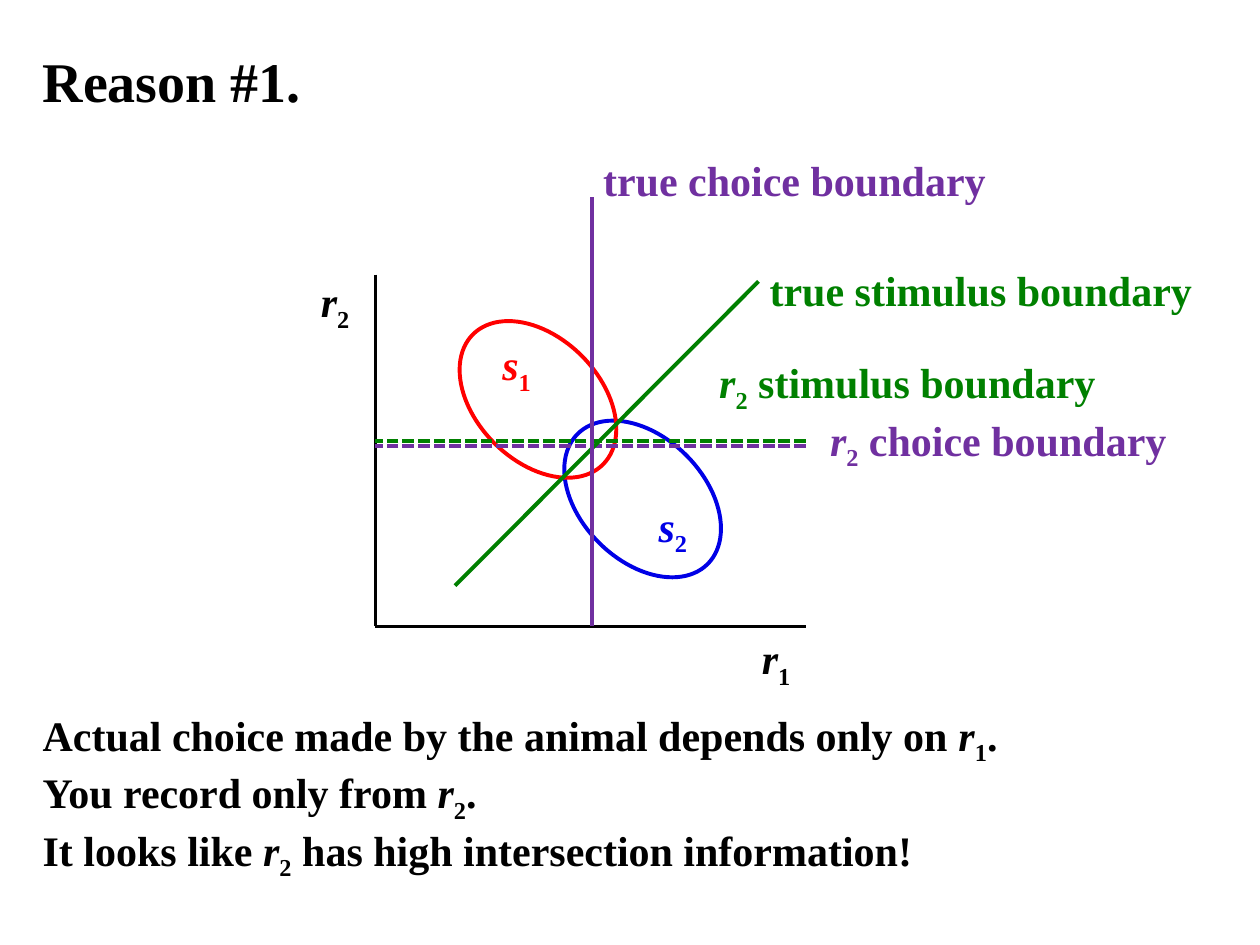
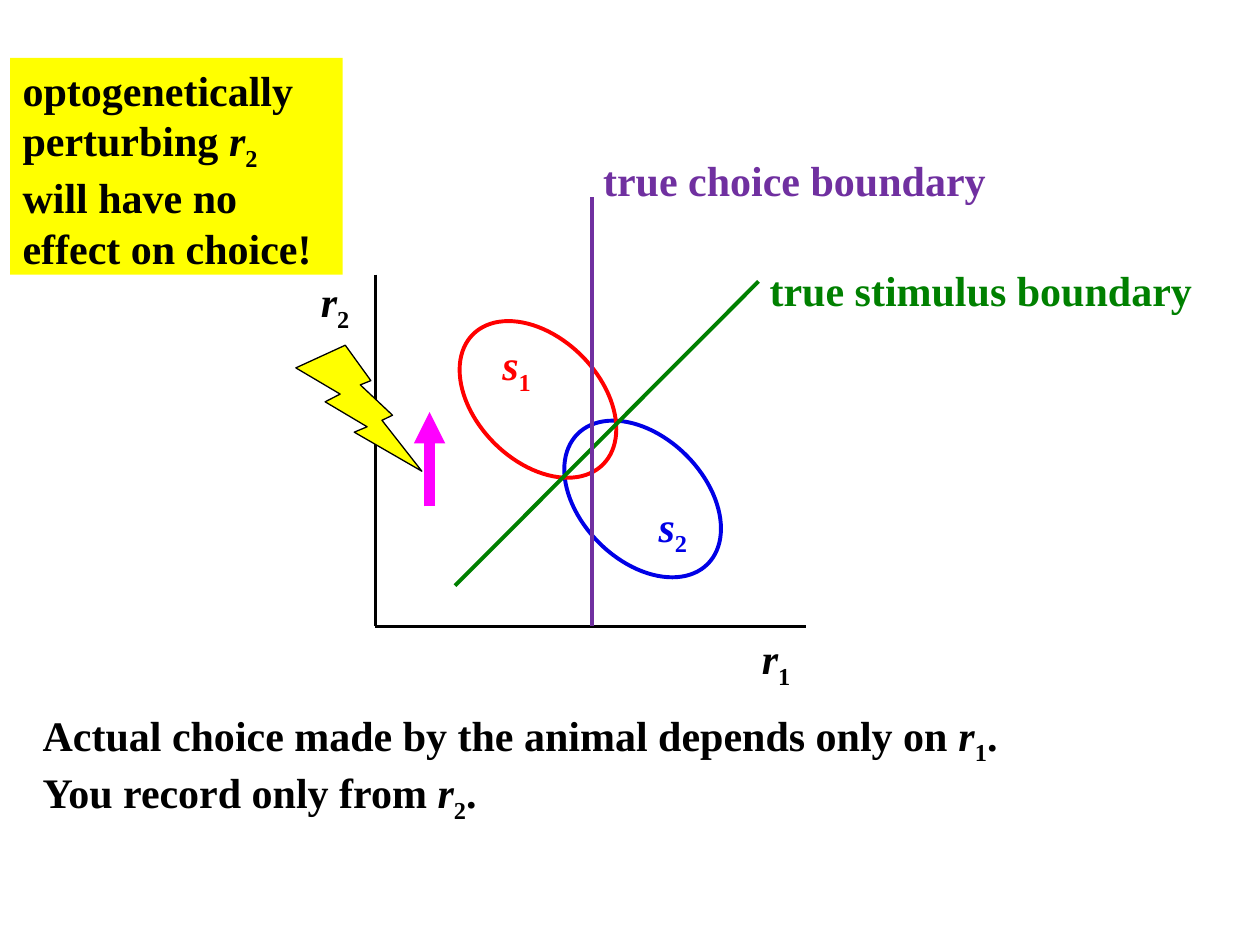
import dataclasses
import typing

import lxml.etree
import pptx
import pptx.dml.color
import pptx.enum.dml
import pptx.enum.shapes
import pptx.enum.text
import pptx.oxml.ns
import pptx.util

Pt = pptx.util.Pt
Kind = pptx.enum.shapes.MSO_SHAPE


@dataclasses.dataclass(frozen=True)
class Theme:
    font: str = "Times New Roman"
    title: int = 32
    body: int = 24
    black: str = "000000"
    red: str = "FF0000"
    blue: str = "0000E6"
    green: str = "008000"
    purple: str = "7030A0"
    yellow: str = "FFFF00"
    pink: str = "FF00FF"
    thin: float = 0.75
    axis: float = 1.5
    curve: float = 2.25
    arrow: float = 6


class Box(typing.NamedTuple):
    left: float
    top: float
    width: float
    height: float

    def sub(self, left, top, width, height):
        """Give a box whose place is measured from this one."""
        return Box(self.left + left, self.top + top, width, height)


THEME = Theme()
PLOT = Box(214.5, 157, 246, 201)
TITLE = Box(17.3, 23, 690, 46)
NOTES = Box(17.3, 401.8, 566.6, 94.3)
CALL = Box(5.8, 33.1, 190, 123.8)
FACTS = ["Actual choice made by the animal depends only on ~r1~.",
         "You record only from ~r2~."]
ROW = 36


def rgb(color):
    return pptx.dml.color.RGBColor.from_string(color)


def spot(box):
    return [Pt(side) for side in box]


def write(frame, text, size=THEME.body, color=THEME.black, wrap=False):
    """Write paragraphs; ~r1~ marks an italic letter with a lowered index."""
    frame.word_wrap = wrap
    frame.auto_size = pptx.enum.text.MSO_AUTO_SIZE.SHAPE_TO_FIT_TEXT
    frame.vertical_anchor = pptx.enum.text.MSO_ANCHOR.TOP
    lines = [text] if isinstance(text, str) else text
    for row, line in enumerate(lines):
        para = frame.add_paragraph() if row else frame.paragraphs[0]
        para.alignment = pptx.enum.text.PP_ALIGN.LEFT
        for turn, part in enumerate(line.split("~")):
            pieces = [(part[:1], True, False), (part[1:], False, True)]
            for piece, slant, low in pieces if turn % 2 else [(part, False, False)]:
                if not piece:
                    continue
                run = para.add_run()
                run.text = piece
                font = run.font
                font.name, font.size = THEME.font, Pt(size)
                font.bold, font.italic = True, slant
                font.color.rgb = rgb(color)
                if low:
                    run._r.get_or_add_rPr().set("baseline", "-25000")


def label(slide, box, text, **style):
    write(slide.shapes.add_textbox(*spot(box)).text_frame, text, **style)


def shape(slide, kind, box, fill=None, color=None, width=THEME.curve):
    item = slide.shapes.add_shape(kind, *spot(box))
    item.shadow.inherit = False
    if fill:
        item.fill.solid()
        item.fill.fore_color.rgb = rgb(fill)
    else:
        item.fill.background()
    if color:
        item.line.color.rgb = rgb(color)
        item.line.width = Pt(width)
    else:
        item.line.fill.background()
    return item


def stroke(shapes, box, start, end, color, width=THEME.curve, dash=False, head=False):
    """Draw a straight line between two points measured from the box."""
    ends = [box.left + start[0], box.top + start[1],
            box.left + end[0], box.top + end[1]]
    item = shapes.add_connector(pptx.enum.shapes.MSO_CONNECTOR.STRAIGHT, *spot(ends))
    item.line.color.rgb = rgb(color)
    item.line.width = Pt(width)
    if dash:
        item.line.dash_style = pptx.enum.dml.MSO_LINE.SQUARE_DOT
    name = pptx.oxml.ns.qn
    if head:
        lxml.etree.SubElement(item.line._get_or_add_ln(), name("a:tailEnd"), type="triangle")
    lxml.etree.SubElement(item._element.spPr, name("a:effectLst"))


def axes(slide, box):
    pair = slide.shapes.add_group_shape().shapes
    base = (0, box.height)
    for start, end in [((0, 0), base), (base, (box.width, box.height))]:
        stroke(pair, box, start, end, THEME.black, width=THEME.axis)


def clouds(slide, box):
    """Draw the two response ellipses and name them and the axes."""
    for left, top, color in [(117.4, 75.6, THEME.blue), (57.6, 18.7, THEME.red)]:
        oval = shape(slide, Kind.OVAL, box.sub(left, top, 70.6, 105.1), color=color)
        oval.rotation = 315
    for left, top, text, color in [
            (65.5, 33.1, "~s1~", THEME.red), (154.8, 125.3, "~s2~", THEME.blue),
            (213.8, box.height, "~r1~", THEME.black), (-38.2, -2.9, "~r2~", THEME.black)]:
        label(slide, box.sub(left, top, 32.4, ROW), text, color=color)


def bounds(slide, box):
    """Draw the true stimulus and choice boundaries."""
    stroke(slide.shapes, box, (219, 3.8), (45.5, 177.7), THEME.green)
    label(slide, box.sub(218.2, -9.4, 258.5, ROW), "true stimulus boundary",
          color=THEME.green)
    stroke(slide.shapes, box, (123.8, box.height), (123.8, -44.6), THEME.purple)
    label(slide, box.sub(123.1, -72, 235.4, ROW), "true choice boundary",
          color=THEME.purple)


def dashes(slide, box):
    """Draw the boundaries seen from r2 alone."""
    for left, top, width, level, word, color in [
            (252.7, 76.3, 215.3, 98, "choice", THEME.purple),
            (189.4, 43.2, 234, 95, "stimulus", THEME.green)]:
        label(slide, box.sub(left, top, width, ROW), f"~r2~ {word} boundary", color=color)
        stroke(slide.shapes, box, (box.width, level), (0, level), color, dash=True)


def jolt(slide, box):
    """Show the perturbation of r2."""
    shape(slide, Kind.LIGHTNING_BOLT, box.sub(-45.4, 40.3, 72, 72),
          fill=THEME.yellow, color=THEME.black, width=THEME.thin)
    stroke(slide.shapes, box, (31, 132.4), (31, 78.4), THEME.pink,
           width=THEME.arrow, head=True)


def callout(slide, box):
    note = shape(slide, Kind.RECTANGLE, box, fill=THEME.yellow)
    write(note.text_frame, ["optogenetically perturbing ~r2~",
                            "will have no effect on choice!"], wrap=True)


def reason(slide):
    axes(slide, PLOT)
    clouds(slide, PLOT)
    dashes(slide, PLOT)
    bounds(slide, PLOT)
    label(slide, NOTES, FACTS + ["It looks like ~r2~ has high intersection information!"])
    label(slide, TITLE, "Reason #1.", size=THEME.title, wrap=True)


def perturb(slide):
    axes(slide, PLOT)
    clouds(slide, PLOT)
    bounds(slide, PLOT)
    label(slide, NOTES._replace(height=65.5), FACTS)
    callout(slide, CALL)
    jolt(slide, PLOT)


def main():
    deck = pptx.Presentation()
    deck.slide_width, deck.slide_height = Pt(720), Pt(540)
    for build in (reason, perturb):
        build(deck.slides.add_slide(deck.slide_layouts[6]))
    deck.save("out.pptx")


if __name__ == "__main__":
    main()
